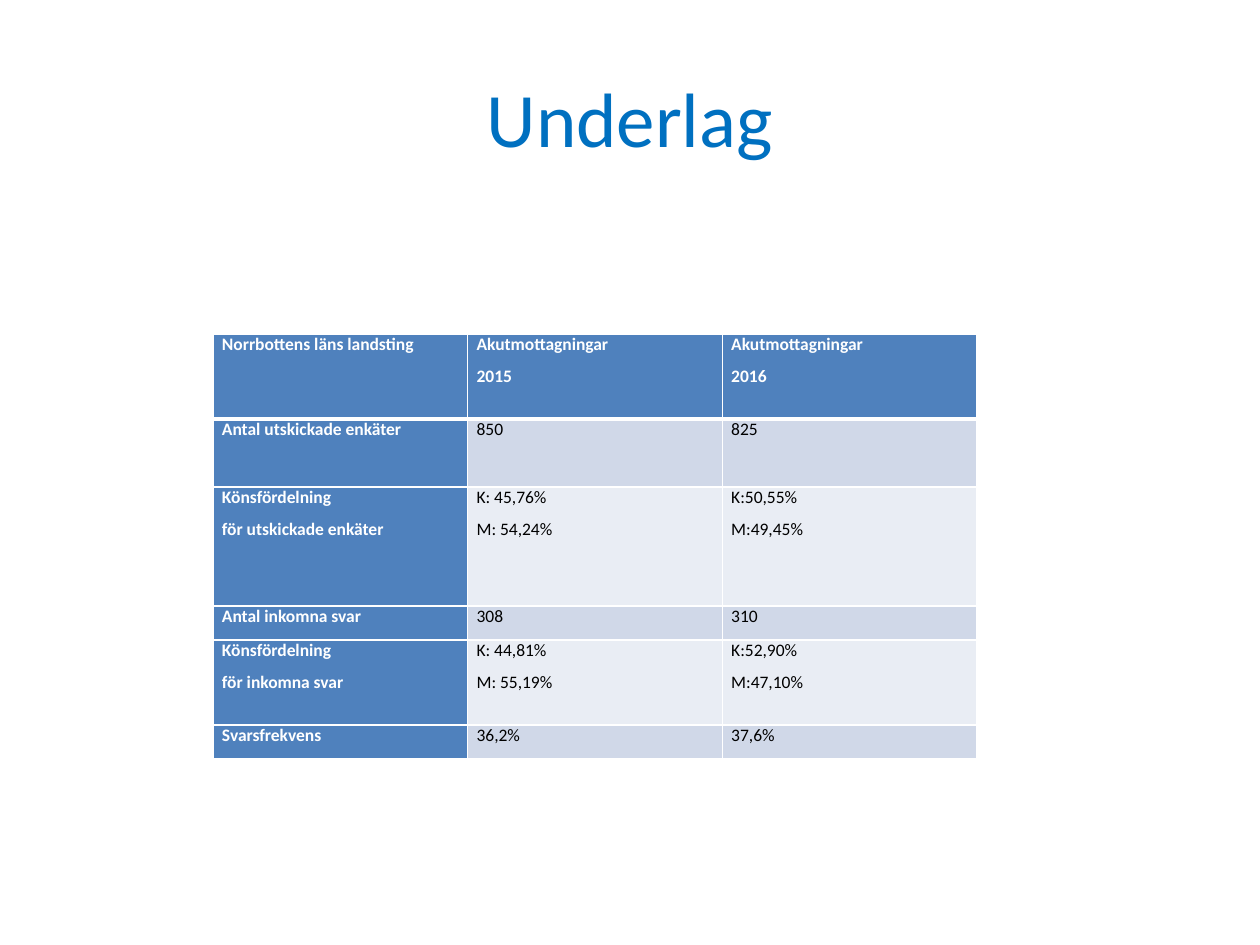
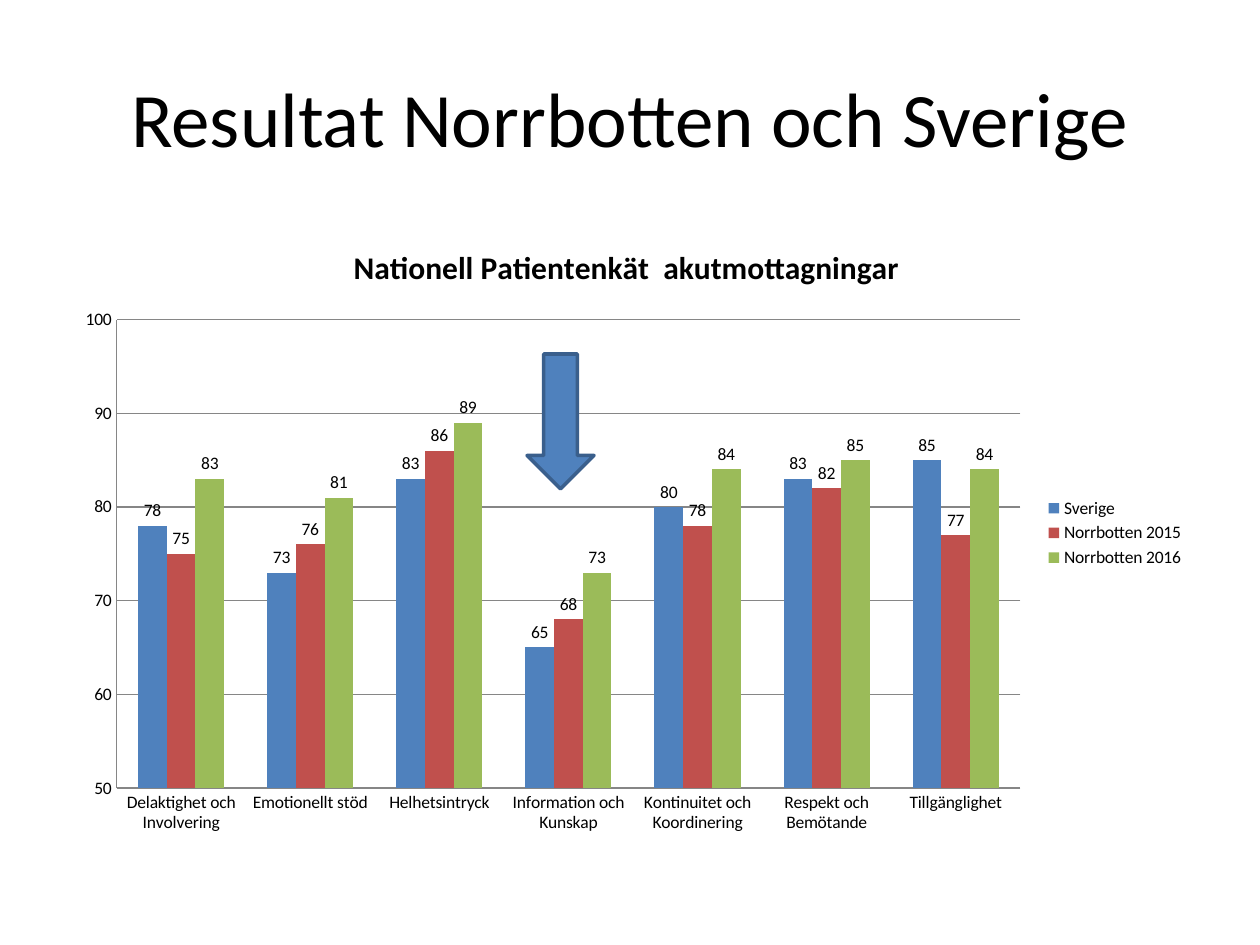
import lxml.etree
import pptx
import pptx.chart.data
import pptx.dml.color
import pptx.enum.chart
import pptx.enum.shapes
import pptx.enum.text
import pptx.oxml.ns
import pptx.util

EMU_PER_PX = 914400 / 126
FONT = "Calibri"
BLUE, RED, GREEN = "4F81BD", "C0504D", "9BBB59"
WHITE, BLACK, TITLE_BLUE = "FFFFFF", "000000", "0070C0"
BANDS = ("D0D8E8", "E9EDF4")
GRID_GREY, ARROW_EDGE = "868686", "3A5F8C"
TITLE_BOX = (63, 38, 1134, 158)

SURVEY_ROWS = [
    (85, ["Norrbottens läns landsting", "Akutmottagningar\n2015", "Akutmottagningar\n2016"]),
    (68, ["Antal utskickade enkäter", "850", "825"]),
    (119, ["Könsfördelning\nför utskickade enkäter", "K: 45,76%\nM: 54,24%", "K:50,55%\nM:49,45%"]),
    (34, ["Antal inkomna svar", "308", "310"]),
    (85, ["Könsfördelning\nför inkomna svar", "K: 44,81%\nM: 55,19%", "K:52,90%\nM:47,10%"]),
    (34, ["Svarsfrekvens", "36,2%", "37,6%"]),
]
DIMENSIONS = [
    "Delaktighet och Involvering", "Emotionellt stöd", "Helhetsintryck",
    "Information och Kunskap", "Kontinuitet och Koordinering",
    "Respekt och Bemötande", "Tillgänglighet",
]
RESULTS = [
    ("Sverige", BLUE, (78, 73, 83, 65, 80, 83, 85)),
    ("Norrbotten 2015", RED, (75, 76, 86, 68, 78, 82, 77)),
    ("Norrbotten 2016", GREEN, (83, 81, 89, 73, 84, 85, 84)),
]


def px(length):
    """Turn a length in px into EMU."""
    return pptx.util.Emu(round(length * EMU_PER_PX))


def rgb(color):
    """Turn a hex string into a colour."""
    return pptx.dml.color.RGBColor.from_string(color)


def apply(target, values):
    """Set each attribute in values on target."""
    for name, value in values.items():
        setattr(target, name, value)


def style_font(font, size, color, bold=False):
    """Give a font the deck's typeface with a size, colour and weight."""
    apply(font, {"name": FONT, "size": pptx.util.Pt(size), "bold": bold})
    font.color.rgb = rgb(color)


def paint(fill, color):
    """Make a fill solid in one colour."""
    fill.solid()
    fill.fore_color.rgb = rgb(color)


def add_titled_slide(deck, heading, color):
    """Add a slide with its title placeholder filled and placed."""
    slide = deck.slides.add_slide(deck.slide_layouts[5])
    title = slide.shapes.title
    apply(title, dict(zip(("left", "top", "width", "height"), map(px, TITLE_BOX))))
    title.text_frame.text = heading
    title.text_frame.vertical_anchor = pptx.enum.text.MSO_ANCHOR.MIDDLE
    paragraph = title.text_frame.paragraphs[0]
    paragraph.alignment = pptx.enum.text.PP_ALIGN.CENTER
    style_font(paragraph.runs[0].font, 44, color)
    return slide


def set_borders(cell, widths):
    """Draw white borders with widths in points for left, right, top and bottom."""
    properties = cell._tc.get_or_add_tcPr()
    for position, (side, width) in enumerate(zip("LRTB", widths)):
        border = lxml.etree.Element(
            pptx.oxml.ns.qn(f"a:ln{side}"), w=str(pptx.util.Pt(width)))
        solid = lxml.etree.SubElement(border, pptx.oxml.ns.qn("a:solidFill"))
        lxml.etree.SubElement(solid, pptx.oxml.ns.qn("a:srgbClr"), val=WHITE)
        properties.insert(position, border)


def fill_cell(cell, wording, row, column):
    """Write and format one cell according to its place in the table."""
    heading = row == 0 or column == 0
    cell.text = wording
    apply(cell, {"margin_left": px(9), "margin_right": px(9),
                 "margin_top": 0, "margin_bottom": 0})
    paint(cell.fill, BLUE if heading else BANDS[(row - 1) % 2])
    set_borders(cell, (1, 1, 3 if row == 1 else 1, 3 if row == 0 else 1))
    for paragraph in cell.text_frame.paragraphs:
        apply(paragraph, {"space_before": pptx.util.Pt(3), "space_after": pptx.util.Pt(3)})
        style_font(paragraph.runs[0].font, 10, WHITE if heading else BLACK, heading)


def add_survey_table(slide, left, top, width):
    """Add the survey table with equal columns across the given width."""
    height = sum(row_height for row_height, _ in SURVEY_ROWS)
    columns = len(SURVEY_ROWS[0][1])
    table = slide.shapes.add_table(
        len(SURVEY_ROWS), columns, px(left), px(top), px(width), px(height)).table
    for row, (row_height, wordings) in enumerate(SURVEY_ROWS):
        table.rows[row].height = px(row_height)
        for column, wording in enumerate(wordings):
            fill_cell(table.cell(row, column), wording, row, column)


def format_axes(chart):
    """Set the value range, gridlines and axis lines."""
    no_tick = pptx.enum.chart.XL_TICK_MARK.NONE
    apply(chart.value_axis, {"minimum_scale": 50, "maximum_scale": 100, "major_unit": 10,
                             "has_major_gridlines": True})
    for axis in (chart.category_axis, chart.value_axis):
        apply(axis, {"major_tick_mark": no_tick, "minor_tick_mark": no_tick})
    for part in (chart.category_axis, chart.value_axis, chart.value_axis.major_gridlines):
        part.format.line.color.rgb = rgb(GRID_GREY)
        part.format.line.width = pptx.util.Pt(0.75)


def add_results_chart(slide, left, top, width, height):
    """Add the clustered column chart comparing the results."""
    scores = pptx.chart.data.CategoryChartData()
    scores.categories = DIMENSIONS
    for name, _, values in RESULTS:
        scores.add_series(name, values)
    chart = slide.shapes.add_chart(
        pptx.enum.chart.XL_CHART_TYPE.COLUMN_CLUSTERED,
        px(left), px(top), px(width), px(height), scores).chart
    style_font(chart.font, 10, BLACK)
    apply(chart, {"has_title": True, "has_legend": True})
    heading = chart.chart_title.text_frame
    heading.text = "Nationell Patientenkät  akutmottagningar "
    style_font(heading.paragraphs[0].runs[0].font, 18, BLACK, True)
    apply(chart.legend, {"position": pptx.enum.chart.XL_LEGEND_POSITION.RIGHT,
                         "include_in_layout": False})
    format_axes(chart)
    plot = chart.plots[0]
    apply(plot, {"gap_width": 150, "overlap": 0, "vary_by_categories": False})
    for series, (_, color, _) in zip(plot.series, RESULTS):
        paint(series.format.fill, color)
        apply(series.data_labels, {
            "show_value": True,
            "position": pptx.enum.chart.XL_LABEL_POSITION.OUTSIDE_END})


def add_lowest_score_arrow(slide, left, top, width, height):
    """Add the arrow pointing down at the lowest scores."""
    arrow = slide.shapes.add_shape(
        pptx.enum.shapes.MSO_SHAPE.DOWN_ARROW, px(left), px(top), px(width), px(height))
    arrow.shadow.inherit = False
    paint(arrow.fill, BLUE)
    arrow.line.color.rgb = rgb(ARROW_EDGE)
    arrow.line.width = pptx.util.Pt(2)


def main():
    """Build both slides and save the deck."""
    deck = pptx.Presentation()
    apply(deck, {"slide_width": px(1260), "slide_height": px(945)})
    survey = add_titled_slide(deck, "Underlag", TITLE_BLUE)
    add_survey_table(survey, 213, 334, 764)
    results = add_titled_slide(deck, "Resultat Norrbotten och Sverige", BLACK)
    add_results_chart(results, 63, 221, 1134, 624)
    add_lowest_score_arrow(results, 527, 354, 67, 135)
    deck.save("out.pptx")


if __name__ == "__main__":
    main()
